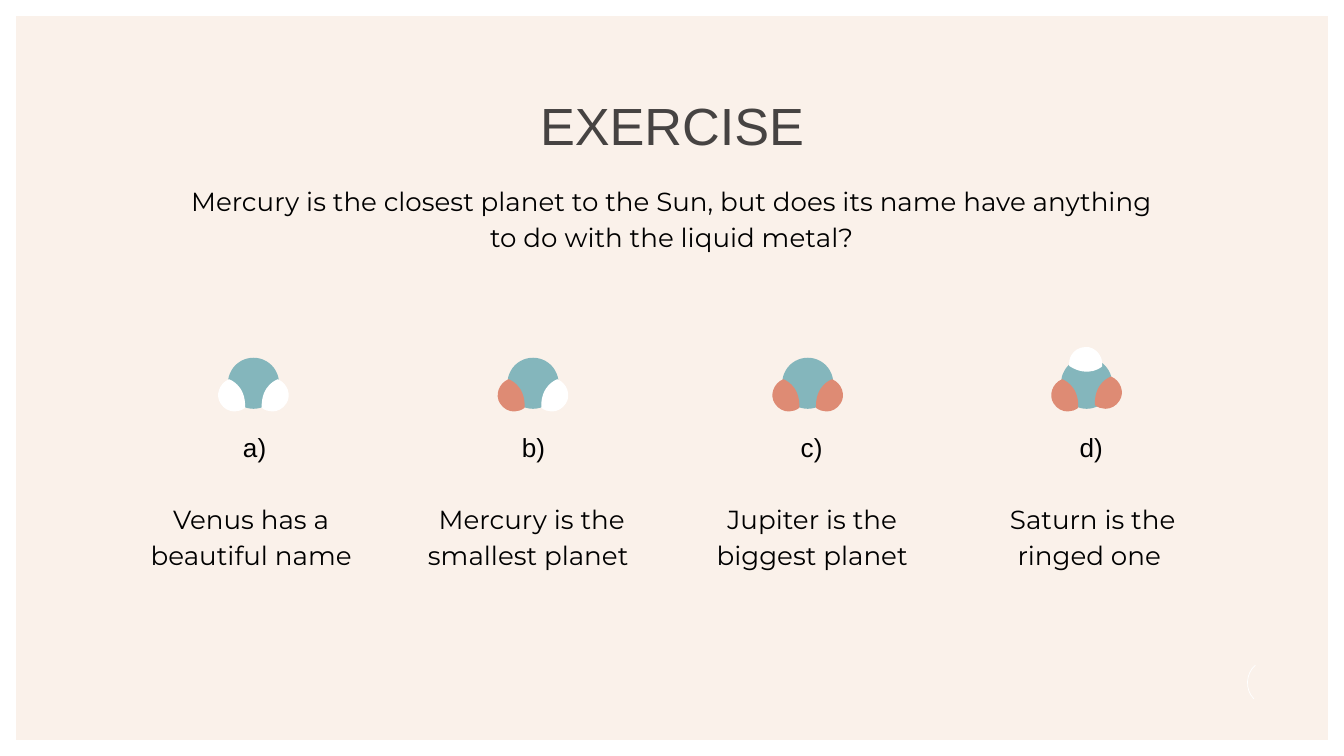
from dataclasses import dataclass

from lxml.etree import SubElement
from pptx import Presentation
from pptx.dml.color import RGBColor
from pptx.enum.shapes import MSO_SHAPE
from pptx.enum.text import MSO_ANCHOR, MSO_AUTO_SIZE, PP_ALIGN
from pptx.oxml.ns import qn
from pptx.shapes.autoshape import Shape
from pptx.shapes.shapetree import GroupShapes, SlideShapes
from pptx.slide import Slide
from pptx.util import Inches, Pt

Point = tuple[float, float]


@dataclass(frozen=True)
class Theme:
    frame: RGBColor = RGBColor(0xFA, 0xF1, 0xEA)
    heading: RGBColor = RGBColor(0x46, 0x43, 0x42)
    text: RGBColor = RGBColor(0, 0, 0)
    core: RGBColor = RGBColor(0x84, 0xB6, 0xBC)
    active: RGBColor = RGBColor(0xDE, 0x8B, 0x74)
    plain: RGBColor = RGBColor(0xFF, 0xFF, 0xFF)
    label_font: str = "Arial"
    body_font: str = "Montserrat"
    title_size: int = 28
    body_size: int = 14
    arc_width: float = 0.39


@dataclass(frozen=True)
class Box:
    column: float
    row: float
    columns: float
    rows: float

    def shifted(self, columns: float) -> "Box":
        return Box(self.column + columns, self.row, self.columns, self.rows)

    def emu(self) -> list[int]:
        return [cells(n) for n in (self.column, self.row, self.columns, self.rows)]


@dataclass(frozen=True)
class Lettering:
    font: str
    size: int
    color: RGBColor
    align: PP_ALIGN
    line_spacing: float = 1.0
    space_after: int = 0


@dataclass(frozen=True)
class Lobe:
    color: RGBColor
    mirrored: bool = False
    shift: float = 0
    lift: float = 0
    turn: float = 0


@dataclass(frozen=True)
class Option:
    letter: str
    statement: str
    molecule_column: float
    lobes: tuple[Lobe, ...]


THEME = Theme()
GRID_COLUMNS, GRID_ROWS = 100, 56.25
CELL = Inches(0.1)
MARGIN = 1.2
MOLECULE_ROW = 28.52
CORE_SIZE = 3.8
LABEL = Box(17.1, 31.1, 4.4, 4.7)
LABEL_PITCH = 20.75
CAPTION = Box(9.8, 36.1, 17.8, 8.4)
CAPTION_PITCH = 20.87
ARC: list[Point] = [(93.4, 49.5), (92.7, 50.1), (92.6, 51.3), (93.3, 52)]
LOBE: list[Point] = [
    (1.82, -0.3),
    (1.82, -0.3), (0.55, 0.1), (0.62, 1.83),
    (0.85, 2), (1.12, 2.1), (1.4, 2.1),
    (1.8, 2.1), (2.2, 1.9), (2.45, 1.5),
    (2.85, 0.9), (2.55, 0), (1.82, -0.3),
]
HEADING = Lettering(THEME.label_font, THEME.title_size, THEME.heading, PP_ALIGN.CENTER)
QUESTION = Lettering(THEME.body_font, THEME.body_size, THEME.text, PP_ALIGN.CENTER, 1.15)
LETTER = Lettering(THEME.label_font, THEME.body_size, THEME.text, PP_ALIGN.LEFT)
STATEMENT = Lettering(THEME.body_font, THEME.body_size, THEME.text, PP_ALIGN.CENTER, 1.15, 16)

OPTIONS = [
    Option("a)", "Venus has a beautiful name", 18.86,
           (Lobe(THEME.plain), Lobe(THEME.plain, mirrored=True))),
    Option("b)", "Mercury is the smallest planet ", 39.66,
           (Lobe(THEME.plain), Lobe(THEME.active, mirrored=True))),
    Option("c)", "Jupiter is the biggest planet", 60.1,
           (Lobe(THEME.active), Lobe(THEME.active, mirrored=True))),
    Option("d)", "Saturn is the ringed one ", 80.85,
           (Lobe(THEME.active, lift=0.2), Lobe(THEME.active, mirrored=True),
            Lobe(THEME.plain, mirrored=True, shift=1.75, lift=2.65, turn=120))),
]


def cells(count: float) -> int:
    return round(count * CELL)


def draw_curve(shapes: SlideShapes | GroupShapes, points: list[Point], closed: bool) -> Shape:
    corners = [(cells(x), cells(y)) for x, y in points]
    builder = shapes.build_freeform(*corners[0], scale=1.0)
    builder.add_line_segments(corners[1:], close=closed)
    curve = builder.convert_to_shape()
    curve.shadow.inherit = False
    segments = list(curve._element.iter(qn("a:lnTo")))
    for first in range(0, len(segments), 3):
        bezier = segments[first].makeelement(qn("a:cubicBezTo"))
        segments[first].addprevious(bezier)
        for segment in segments[first:first + 3]:
            bezier.append(segment[0])
            segment.getparent().remove(segment)
    return curve


def paint(shape: Shape, color: RGBColor) -> None:
    shape.shadow.inherit = False
    shape.fill.solid()
    shape.fill.fore_color.rgb = color
    shape.line.fill.background()


def write(holder: Shape, box: Box, text: str, lettering: Lettering) -> None:
    holder.left, holder.top, holder.width, holder.height = box.emu()
    frame = holder.text_frame
    frame.word_wrap = True
    frame.auto_size = MSO_AUTO_SIZE.NONE
    frame.vertical_anchor = MSO_ANCHOR.TOP
    frame.margin_left = frame.margin_right = frame.margin_top = frame.margin_bottom = CELL
    paragraph = frame.paragraphs[0]
    paragraph.alignment = lettering.align
    paragraph.line_spacing = lettering.line_spacing
    paragraph.space_before = Pt(0)
    paragraph.space_after = Pt(lettering.space_after)
    properties = paragraph._p.get_or_add_pPr()
    properties.set("marL", "0")
    properties.set("indent", "0")
    SubElement(properties, qn("a:buNone"))
    run = paragraph.add_run()
    run.text = text
    run.font.name = lettering.font
    run.font.size = Pt(lettering.size)
    run.font.bold = False
    run.font.color.rgb = lettering.color


def draw_molecule(slide: Slide, option: Option) -> None:
    parts = slide.shapes.add_group_shape().shapes
    half = CORE_SIZE / 2
    core = Box(option.molecule_column - half, MOLECULE_ROW - half, CORE_SIZE, CORE_SIZE)
    paint(parts.add_shape(MSO_SHAPE.OVAL, *core.emu()), THEME.core)
    for lobe in option.lobes:
        side = -1 if lobe.mirrored else 1
        points = [(option.molecule_column + side * x + lobe.shift,
                   MOLECULE_ROW + y - lobe.lift) for x, y in LOBE]
        petal = draw_curve(parts, points, closed=True)
        petal.rotation = lobe.turn
        paint(petal, lobe.color)


def draw_backdrop(slide: Slide) -> None:
    inner = Box(MARGIN, MARGIN, GRID_COLUMNS - 2 * MARGIN, GRID_ROWS - 2 * MARGIN)
    frame = slide.shapes.add_shape(MSO_SHAPE.RECTANGLE, *inner.emu())
    paint(frame, THEME.frame)
    arc = draw_curve(slide.shapes, ARC, closed=False)
    arc.fill.background()
    arc.line.color.rgb = THEME.plain
    arc.line.width = Pt(THEME.arc_width)
    for part in (frame, arc):
        slide.shapes.title._element.addprevious(part._element)


def main() -> None:
    deck = Presentation()
    deck.slide_width, deck.slide_height = cells(GRID_COLUMNS), cells(GRID_ROWS)
    slide = deck.slides.add_slide(deck.slide_layouts.get_by_name("Comparison"))
    title, *captions = slide.placeholders
    draw_backdrop(slide)
    write(title, Box(7.75, 5.9, 84.5, 6.3), "EXERCISE", HEADING)
    question = Box(13.15, 12.45, 73.7, 11.8)
    write(slide.shapes.add_textbox(*question.emu()), question,
          "Mercury is the closest planet to the Sun, but does its name have anything "
          "to do with the liquid metal?", QUESTION)
    for index, (option, caption) in enumerate(zip(OPTIONS, captions)):
        label = LABEL.shifted(index * LABEL_PITCH)
        write(slide.shapes.add_textbox(*label.emu()), label, option.letter, LETTER)
        draw_molecule(slide, option)
        write(caption, CAPTION.shifted(index * CAPTION_PITCH), option.statement, STATEMENT)
    deck.save("out.pptx")


if __name__ == "__main__":
    main()
